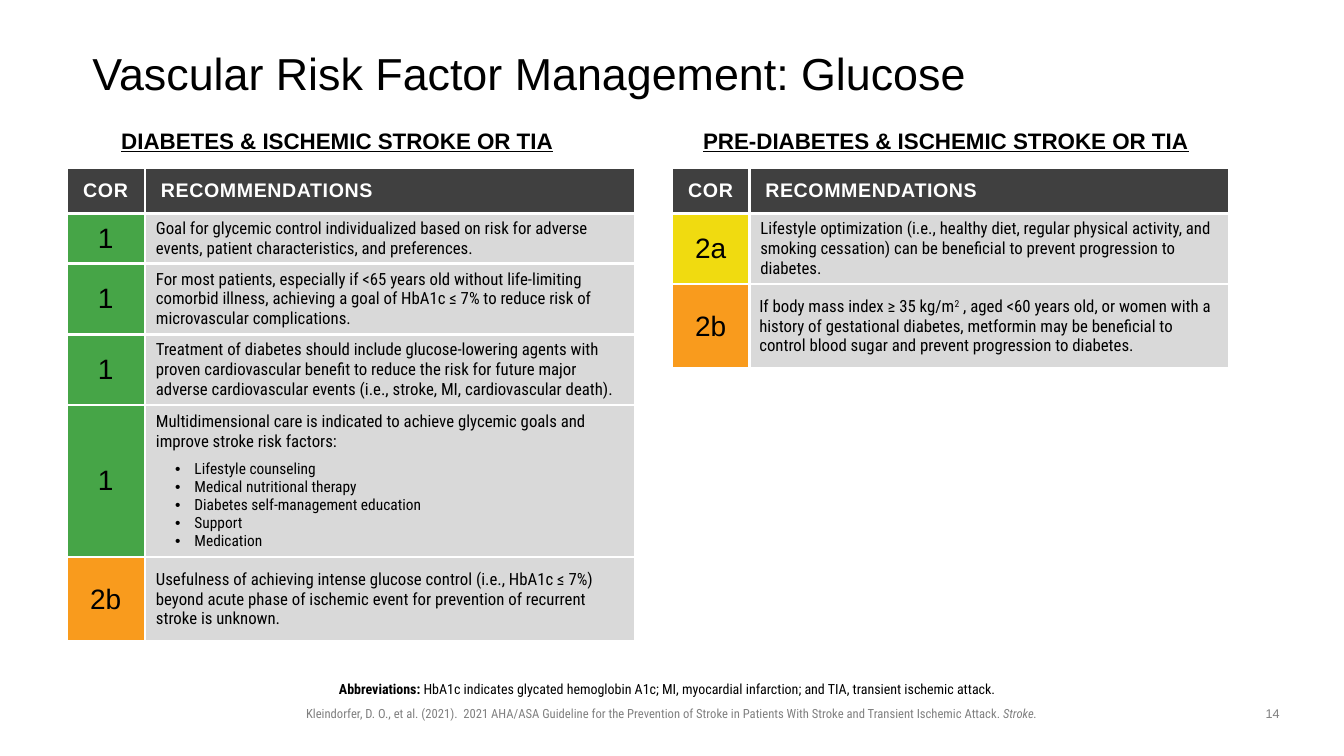
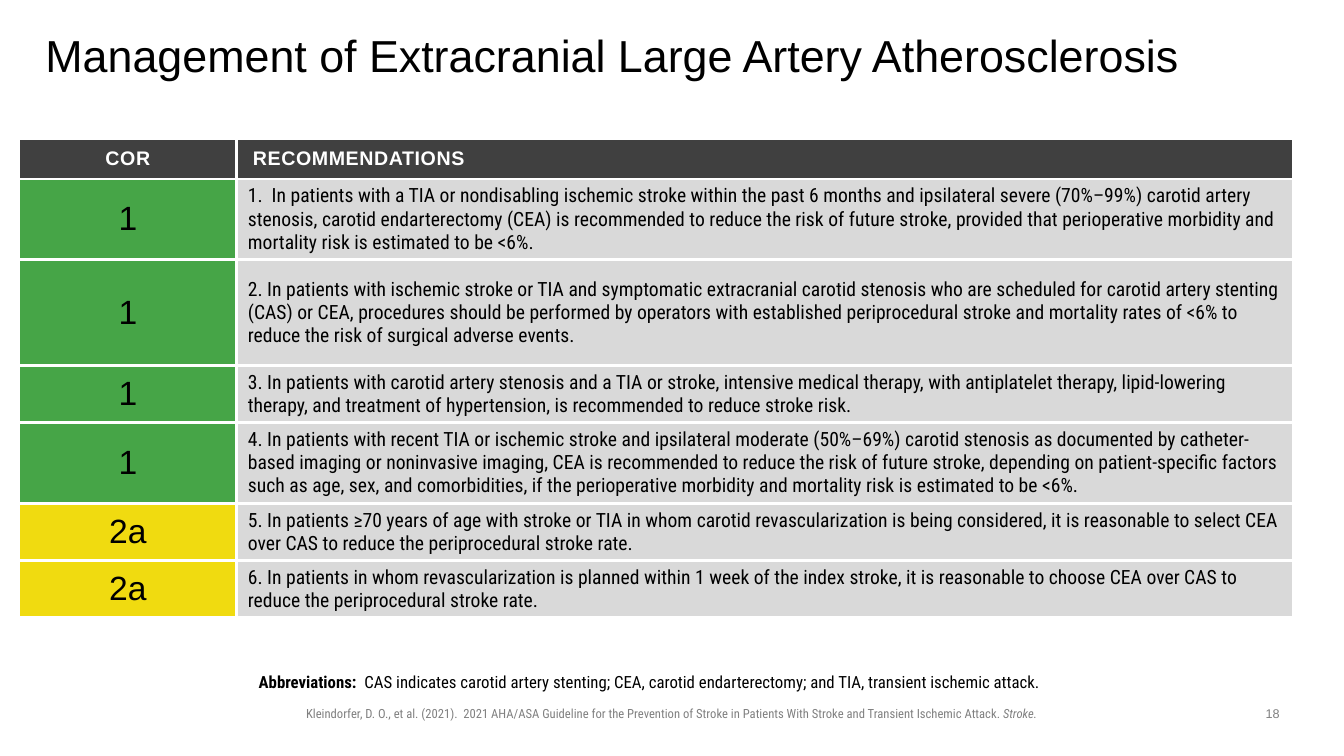
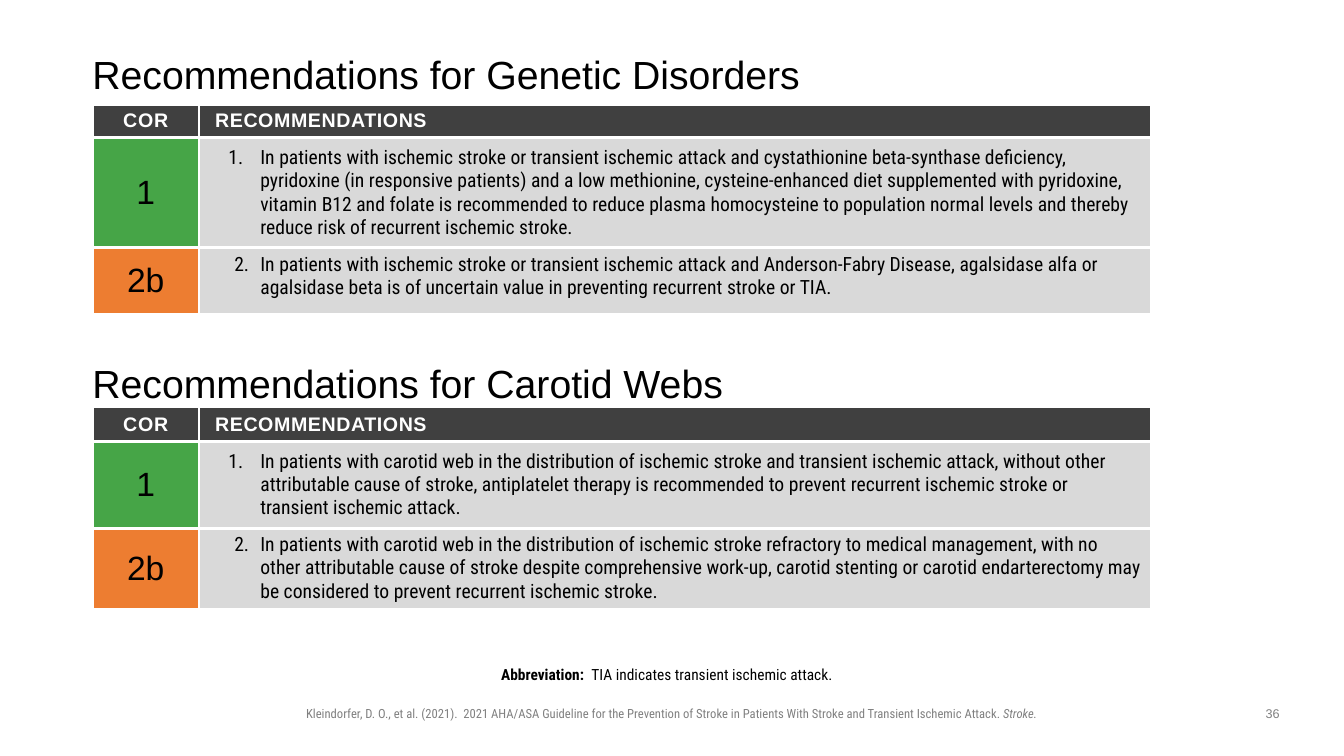
import dataclasses

import lxml.etree
import pptx
import pptx.dml.color
import pptx.enum.text
import pptx.oxml.ns
import pptx.util

ALIGN = pptx.enum.text.PP_ALIGN
ANCHOR = pptx.enum.text.MSO_ANCHOR
COLS, ROWS = 160, 90


@dataclasses.dataclass(frozen=True)
class Theme:
    head_font: str = "Arial"
    body_font: str = "Roboto Condensed"
    ink: str = "000000"
    paper: str = "FFFFFF"
    muted: str = "808080"
    header: str = "404040"
    panel: str = "D9D9D9"
    green: str = "46A547"
    yellow: str = "F0DB10"
    amber: str = "F99B1D"
    orange: str = "ED7D31"
    title: float = 32
    half_title: float = 28
    subhead: float = 16
    label: float = 14
    footer: float = 9
    border: float = 2.25
    inset: float = 0.6
    wide_inset: float = 1.2
    indent: float = 0.72


class Deck:
    """Draws guideline slides on a 160 by 90 grid in one shared style."""

    def __init__(self, theme):
        self.t = theme
        self.prs = pptx.Presentation()
        self.prs.slide_width = pptx.util.Inches(13.33)
        self.prs.slide_height = pptx.util.Inches(7.5)
        self.slide = None

    def x(self, cols):
        return round(self.prs.slide_width * cols / COLS)

    def y(self, rows):
        return round(self.prs.slide_height * rows / ROWS)

    def new_slide(self, number):
        self.slide = self.prs.slides.add_slide(self.prs.slide_layouts[6])
        cite = self.text(35.25, 83.4, 89.4, 3)
        p = self.para(cite, align=ALIGN.CENTER)
        style = dict(size=self.t.footer, color=self.t.muted)
        self.run(p, "Kleindorfer, D. O., et al. (2021).  2021 AHA/ASA Guideline for the Prevention of "
                    "Stroke in Patients With Stroke and Transient Ischemic Attack. ", **style)
        self.run(p, "Stroke.", italic=True, **style)
        p = self.para(self.text(149, 83.4, 5, 3.1), align=ALIGN.CENTER)
        self.run(p, str(number), font=self.t.head_font, **style)

    def text(self, left, top, width, height, insets=None, anchor=ANCHOR.TOP):
        sp = self.slide.shapes.add_textbox(self.x(left), self.y(top), self.x(width), self.y(height))
        tf = sp.text_frame
        tf.word_wrap = True
        tf.vertical_anchor = anchor
        if insets:
            sides = ("margin_left", "margin_top", "margin_right", "margin_bottom")
            for side, inset in zip(sides, insets):
                setattr(tf, side, self.x(inset))
        return tf

    def para(self, tf, align=ALIGN.LEFT, left=0, hang=0, bullet=None, start=None, after=0, line=None):
        p = tf.paragraphs[0] if not tf.paragraphs[0].runs else tf.add_paragraph()
        pPr = p._p.get_or_add_pPr()
        pPr.set("marL", str(self.x(left)))
        pPr.set("indent", str(-self.x(hang)))
        if bullet:
            lxml.etree.SubElement(pPr, pptx.oxml.ns.qn("a:buFont"), typeface=self.t.head_font)
            lxml.etree.SubElement(pPr, pptx.oxml.ns.qn("a:buChar"), char=bullet)
        if start:
            lxml.etree.SubElement(pPr, pptx.oxml.ns.qn("a:buFont"), typeface=self.t.body_font)
            lxml.etree.SubElement(pPr, pptx.oxml.ns.qn("a:buAutoNum"), type="arabicPeriod", startAt=str(start))
        p.alignment = align
        p.space_after = pptx.util.Pt(after)
        if line:
            p.line_spacing = line
        return p

    def run(self, p, text, size, font=None, color=None, bold=False, italic=False,
            underline=False, spacing=0, baseline=0):
        r = p.add_run()
        r.text = text
        r.font.name = font or self.t.body_font
        r.font.size = pptx.util.Pt(size)
        r.font.color.rgb = pptx.dml.color.RGBColor.from_string(color or self.t.ink)
        r.font.bold, r.font.italic, r.font.underline = bold, italic, underline
        rPr = r._r.get_or_add_rPr()
        if spacing:
            rPr.set("spc", str(round(spacing * 100)))
        if baseline:
            rPr.set("baseline", str(baseline * 1000))

    def title(self, text, left=11, top=4.8, size=None):
        tf = self.text(left, top, 138, 8.6, (0, 0, 0, 0), ANCHOR.MIDDLE)
        self.run(self.para(tf, line=0.9), text, size or self.t.title, self.t.head_font)

    def subhead(self, text, left, width):
        p = self.para(self.text(left, 14.5, width, 4.4), align=ALIGN.CENTER)
        self.run(p, text, self.t.subhead, self.t.head_font, bold=True, underline=True)

    def abbreviations(self, label, text, top, size, left=11, width=138, align=ALIGN.CENTER):
        tf = self.text(left, top, width, 3.6, (0, self.t.inset, self.t.wide_inset, self.t.inset))
        p = self.para(tf, align=align)
        self.run(p, label, size, bold=True)
        self.run(p, text, size)

    def cell(self, cell, fill, inset=None, anchor=ANCHOR.MIDDLE):
        tcPr = cell._tc.get_or_add_tcPr()
        for side in ("lnL", "lnR", "lnT", "lnB"):
            ln = lxml.etree.SubElement(tcPr, pptx.oxml.ns.qn("a:" + side), w=str(pptx.util.Pt(self.t.border)))
            solid = lxml.etree.SubElement(ln, pptx.oxml.ns.qn("a:solidFill"))
            lxml.etree.SubElement(solid, pptx.oxml.ns.qn("a:srgbClr"), val=self.t.paper)
        cell.fill.solid()
        cell.fill.fore_color.rgb = pptx.dml.color.RGBColor.from_string(fill)
        cell.margin_left = cell.margin_right = self.x(inset or self.t.wide_inset)
        cell.margin_top = cell.margin_bottom = self.y(self.t.inset)
        cell.vertical_anchor = anchor
        return cell.text_frame

    def advice(self, cell, text, size, bullets=()):
        tf = self.cell(cell, self.t.panel, self.t.inset)
        self.run(self.para(tf, left=self.t.indent, after=6), text, size)
        for item in bullets:
            self.run(self.para(tf, left=5.3, hang=2.3, bullet="•"), item, size - 1)

    def numbered(self, cell, text, size, start):
        anchor, hang = (ANCHOR.MIDDLE, 3.8) if start == 1 else (ANCHOR.TOP, 3.1)
        tf = self.cell(cell, self.t.panel, anchor=anchor)
        self.run(self.para(tf, left=6.1, hang=hang, start=start), text, size)

    def formula(self, cell, before, power, after, size):
        p = self.para(self.cell(cell, self.t.panel))
        self.run(p, before, size)
        self.run(p, power, size, baseline=30)
        self.run(p, after, size)

    def table(self, left, top, widths, header_height, rows, grade_size):
        heights = [header_height] + [row[2] for row in rows]
        frame = self.slide.shapes.add_table(len(heights), 2, self.x(left), self.y(top),
                                            self.x(sum(widths)), self.y(sum(heights)))
        table = frame.table
        table.first_row = table.horz_banding = False
        for column, width in zip(table.columns, widths):
            column.width = self.x(width)
        for row, height in zip(table.rows, heights):
            row.height = self.y(height)
        heads = (("COR", ALIGN.CENTER, 0, 0.5), ("RECOMMENDATIONS", ALIGN.LEFT, self.t.indent, 0.4))
        for i, (text, align, indent, spacing) in enumerate(heads):
            p = self.para(self.cell(table.cell(0, i), self.t.header), align, indent)
            self.run(p, text, self.t.label, self.t.head_font, self.t.paper, bold=True, spacing=spacing)
        for i, (grade, fill, _, draw, content) in enumerate(rows, 1):
            tf = self.cell(table.cell(i, 0), fill, self.t.inset)
            self.run(self.para(tf, ALIGN.CENTER), grade, grade_size, self.t.head_font)
            draw(table.cell(i, 1), **content)


def glucose_slide(deck):
    t, size = deck.t, 12
    deck.new_slide(14)
    deck.title("Vascular Risk Factor Management: Glucose")
    deck.subhead("DIABETES & ISCHEMIC STROKE OR TIA", 6.2, 67.9)
    deck.table(7.9, 19.9, (9.35, 58.45), 5.5, [
        ("1", t.green, 6, deck.advice, dict(size=size, text=(
            "Goal for glycemic control individualized based on risk for adverse events, "
            "patient characteristics, and preferences."))),
        ("1", t.green, 8.4, deck.advice, dict(size=size, text=(
            "For most patients, especially if <65 years old without life-limiting comorbid illness, "
            "achieving a goal of HbA1c ≤ 7% to reduce risk of microvascular complications."))),
        ("1", t.green, 8.4, deck.advice, dict(size=size, text=(
            "Treatment of diabetes should include glucose-lowering agents with proven cardiovascular "
            "benefit to reduce the risk for future major adverse cardiovascular events "
            "(i.e., stroke, MI, cardiovascular death)."))),
        ("1", t.green, 18.1, deck.advice, dict(size=size, text=(
            "Multidimensional care is indicated to achieve glycemic goals and improve stroke risk factors:"),
            bullets=("Lifestyle counseling", "Medical nutritional therapy",
                     "Diabetes self-management education", "Support", "Medication"))),
        ("2b", t.amber, 10.1, deck.advice, dict(size=size, text=(
            "Usefulness of achieving intense glucose control (i.e., HbA1c ≤ 7%) beyond acute phase of "
            "ischemic event for prevention of recurrent stroke is unknown."))),
    ], 20)
    deck.subhead("PRE-DIABETES & ISCHEMIC STROKE OR TIA", 78.75, 67.7)
    deck.table(80, 19.9, (9.2, 57.1), 5.5, [
        ("2a", t.yellow, 8.4, deck.advice, dict(size=size, text=(
            "Lifestyle optimization (i.e., healthy diet, regular physical activity, and smoking "
            "cessation) can be beneficial to prevent progression to diabetes."))),
        ("2b", t.amber, 10.1, deck.formula, dict(
            size=size, before="If body mass index ≥ 35 kg/m", power="2", after=(
                " , aged <60 years old, or women with a history of gestational diabetes, metformin may be "
                "beneficial to control blood sugar and prevent progression to diabetes."))),
    ], 20)
    deck.abbreviations("Abbreviations: ", "HbA1c indicates glycated hemoglobin A1c; MI, myocardial "
                       "infarction; and TIA, transient ischemic attack.", 80.4, 10)


def artery_slide(deck):
    t = deck.t
    deck.new_slide(18)
    deck.title("Management of Extracranial Large Artery Atherosclerosis", 5.4, 2.6)
    recommendations = [
        ("1", t.green, 9.5,
         "1.  In patients with a TIA or nondisabling ischemic stroke within the past 6 months and "
         "ipsilateral severe (70%–99%) carotid artery stenosis, carotid endarterectomy (CEA) is "
         "recommended to reduce the risk of future stroke, provided that perioperative morbidity and "
         "mortality risk is estimated to be <6%."),
        ("1", t.green, 12.6,
         "2. In patients with ischemic stroke or TIA and symptomatic extracranial carotid stenosis who "
         "are scheduled for carotid artery stenting (CAS) or CEA, procedures should be performed by "
         "operators with established periprocedural stroke and mortality rates of <6% to reduce the "
         "risk of surgical adverse events."),
        ("1", t.green, 6.7,
         "3. In patients with carotid artery stenosis and a TIA or stroke, intensive medical therapy, "
         "with antiplatelet therapy, lipid-lowering therapy, and treatment of hypertension, is "
         "recommended to reduce stroke risk."),
        ("1", t.green, 9.5,
         "4. In patients with recent TIA or ischemic stroke and ipsilateral moderate (50%–69%) carotid "
         "stenosis as documented by catheter-based imaging or noninvasive imaging, CEA is recommended "
         "to reduce the risk of future stroke, depending on patient-specific factors such as age, sex, "
         "and comorbidities, if the perioperative morbidity and mortality risk is estimated to be <6%."),
        ("2a", t.yellow, 6.7,
         "5. In patients ≥70 years of age with stroke or TIA in whom carotid revascularization is being "
         "considered, it is reasonable to select CEA over CAS to reduce the periprocedural stroke rate."),
        ("2a", t.yellow, 6.7,
         "6. In patients in whom revascularization is planned within 1 week of the index stroke, it is "
         "reasonable to choose CEA over CAS to reduce the periprocedural stroke rate."),
    ]
    rows = [(grade, fill, height, deck.advice, dict(text=text, size=14))
            for grade, fill, height, text in recommendations]
    deck.table(2.25, 16.5, (25.95, 125.8), 4.8, rows, 24)
    deck.abbreviations("Abbreviations:  ", "CAS indicates carotid artery stenting; CEA, carotid "
                       "endarterectomy; and TIA, transient ischemic attack.",
                       79.4, 12, 30.8, 99.7, ALIGN.LEFT)


def disorders_slide(deck):
    t = deck.t
    deck.new_slide(36)
    sections = [
        ("Recommendations for Genetic Disorders", 4.8, 12.4, 3.8, (13.1, 7.9), (
            "In patients with ischemic stroke or transient ischemic attack and cystathionine "
            "beta-synthase deficiency, pyridoxine (in responsive patients) and a low methionine, "
            "cysteine-enhanced diet supplemented with pyridoxine, vitamin B12 and folate is recommended "
            "to reduce plasma homocysteine to population normal levels and thereby reduce risk of "
            "recurrent ischemic stroke.",
            "In patients with ischemic stroke or transient ischemic attack and Anderson-Fabry Disease, "
            "agalsidase alfa or agalsidase beta is of uncertain value in preventing recurrent stroke "
            "or TIA.")),
        ("Recommendations for Carotid Webs", 41.6, 48.4, 4.2, (10.3, 9.4), (
            "In patients with carotid web in the distribution of ischemic stroke and transient ischemic "
            "attack, without other attributable cause of stroke, antiplatelet therapy is recommended to "
            "prevent recurrent ischemic stroke or transient ischemic attack.",
            "In patients with carotid web in the distribution of ischemic stroke refractory to medical "
            "management, with no other attributable cause of stroke despite comprehensive work-up, "
            "carotid stenting or carotid endarterectomy may be considered to prevent recurrent "
            "ischemic stroke.")),
    ]
    grades = (("1", t.green), ("2b", t.orange))
    for title, title_top, table_top, header_height, heights, texts in sections:
        deck.title(title, top=title_top, size=t.half_title)
        rows = [(grade, fill, height, deck.numbered, dict(text=text, size=14, start=i))
                for i, ((grade, fill), height, text) in enumerate(zip(grades, heights, texts), 1)]
        deck.table(11, table_top, (12.7, 113.4), header_height, rows, 24)
    deck.abbreviations("Abbreviation:  ", "TIA indicates transient ischemic attack.", 78.6, 11)


def main():
    deck = Deck(Theme())
    glucose_slide(deck)
    artery_slide(deck)
    disorders_slide(deck)
    deck.prs.save("out.pptx")


if __name__ == "__main__":
    main()
